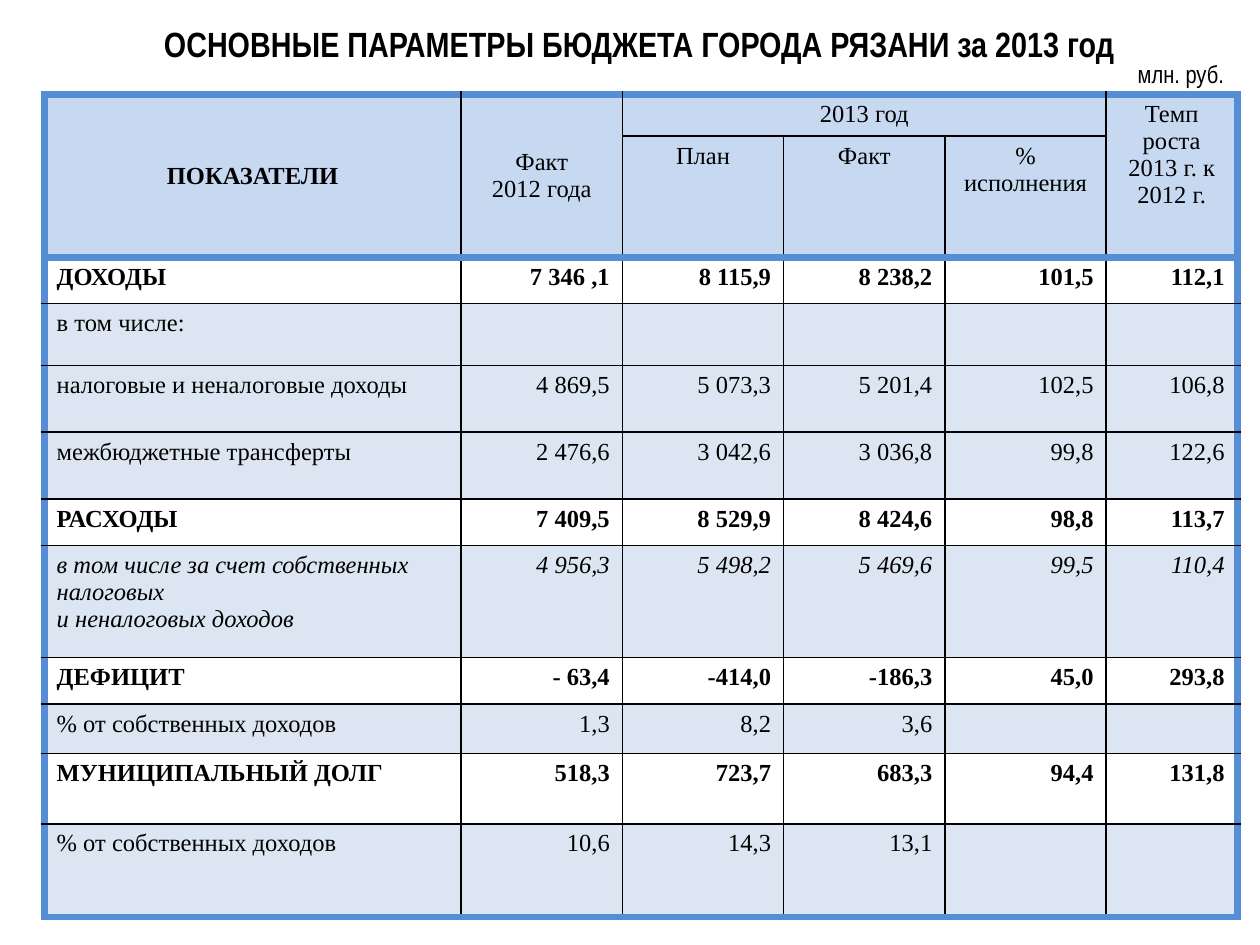
from dataclasses import dataclass

from lxml.etree import SubElement
from pptx import Presentation
from pptx.dml.color import RGBColor
from pptx.enum.text import MSO_ANCHOR, MSO_AUTO_SIZE, PP_ALIGN
from pptx.oxml.ns import qn
from pptx.util import Inches, Pt


@dataclass(frozen=True)
class Theme:
    ink: str = "000000"
    frame: str = "558ED5"
    head: str = "C6D9F1"
    tint: str = "DCE6F2"
    plain: str = "FFFFFF"
    sans: str = "Arial Narrow"
    serif: str = "Times New Roman"
    title: int = 20
    body: int = 14
    thin: float = 1
    thick: float = 4.5


LOOK = Theme()
CELL = Inches(0.1)
COLS = [33.1] + [12.8] * 4 + [10.4]
ROWS = [3.3, 7.6, 3.7, 4.9, 5.3, 5.3, 3.7, 8.9, 3.7, 3.9, 5.6, 7.4]
SPANS = [(0, 0, 1, 0), (0, 1, 1, 1), (0, 2, 0, 4), (0, 5, 1, 5)]
HEAD = [
    (0, 0, ["ПОКАЗАТЕЛИ"]),
    (0, 1, ["Факт", "2012 года"]),
    (0, 2, ["2013 год"]),
    (0, 5, ["Темп роста 2013 г. к 2012 г."]),
    (1, 2, ["План"]),
    (1, 3, ["Факт"]),
    (1, 4, ["% исполнения"]),
]
DATA = [
    ("bold", ["ДОХОДЫ"], "7 346 ,1", "8 115,9", "8 238,2", "101,5", "112,1"),
    ("", ["в том числе:"], "", "", "", "", ""),
    ("", ["налоговые и неналоговые доходы"],
     "4 869,5", "5 073,3", "5 201,4", "102,5", "106,8"),
    ("", ["межбюджетные трансферты"],
     "2 476,6", "3 042,6", "3 036,8", "99,8", "122,6"),
    ("bold", ["РАСХОДЫ"], "7 409,5", "8 529,9", "8 424,6", "98,8", "113,7"),
    ("italic", ["в том числе за счет собственных налоговых", "и неналоговых доходов"],
     "4 956,3", "5 498,2", "5 469,6", "99,5", "110,4"),
    ("bold", ["ДЕФИЦИТ"], "- 63,4", "-414,0", "-186,3", "45,0", "293,8"),
    ("", ["% от собственных доходов"], "1,3", "8,2", "3,6", "", ""),
    ("bold", ["МУНИЦИПАЛЬНЫЙ ДОЛГ"], "518,3", "723,7", "683,3", "94,4", "131,8"),
    ("", ["% от собственных доходов"], "10,6", "14,3", "13,1", "", ""),
]


def grid(*box):
    return [round(n * CELL) for n in box]


def write(frame, lines, align, face, size, style=""):
    for n, line in enumerate(lines):
        para = frame.paragraphs[0] if n == 0 else frame.add_paragraph()
        para.alignment = align
        run = para.add_run()
        run.text = line
        font = run.font
        font.name, font.size = face, Pt(size)
        font.bold, font.italic = style == "bold", style == "italic"
        font.color.rgb = RGBColor.from_string(LOOK.ink)


def title(slide, box):
    shape = slide.shapes.title
    shape.left, shape.top, shape.width, shape.height = grid(*box)
    frame = shape.text_frame
    frame.word_wrap = True
    frame.auto_size = MSO_AUTO_SIZE.NONE
    frame.vertical_anchor = MSO_ANCHOR.MIDDLE
    write(frame, ["ОСНОВНЫЕ ПАРАМЕТРЫ БЮДЖЕТА ГОРОДА РЯЗАНИ за 2013 год"],
          PP_ALIGN.CENTER, LOOK.sans, LOOK.title, "bold")


def unit(slide, box):
    frame = slide.shapes.add_textbox(*grid(*box)).text_frame
    frame.word_wrap = True
    frame.margin_left = Inches(0.25)
    write(frame, ["млн. руб."], PP_ALIGN.LEFT, LOOK.sans, LOOK.body)


def home(row, col):
    for top, left, low, right in SPANS:
        if top <= row <= low and left <= col <= right:
            return top, left
    return row, col


def stroke(row, col, down, over):
    near, side = row + down, col + over
    if not (0 <= near < len(ROWS) and 0 <= side < len(COLS)):
        return LOOK.thick, LOOK.frame
    if home(row, col) == home(near, side):
        return 0, None
    if {row, near} == {1, 2}:
        return LOOK.thick, LOOK.frame
    return LOOK.thin, LOOK.ink


def border(cell, row, col):
    props = cell._tc.get_or_add_tcPr()
    sides = {"lnL": (0, -1), "lnR": (0, 1), "lnT": (-1, 0), "lnB": (1, 0)}
    for tag, step in sides.items():
        width, color = stroke(row, col, *step)
        line = SubElement(props, qn("a:" + tag), w=str(Pt(width)))
        if color:
            fill = SubElement(line, qn("a:solidFill"))
            SubElement(fill, qn("a:srgbClr"), val=color)
        else:
            SubElement(line, qn("a:noFill"))


def paint(cell, row):
    if row < 2:
        color = LOOK.head
    else:
        color = LOOK.plain if DATA[row - 2][0] == "bold" else LOOK.tint
    cell.fill.solid()
    cell.fill.fore_color.rgb = RGBColor.from_string(color)


def budget(slide, box):
    table = slide.shapes.add_table(len(ROWS), len(COLS), *grid(*box)).table
    table.first_row = table.horz_banding = False
    for col, size in zip(table.columns, grid(*COLS)):
        col.width = size
    for row, size in zip(table.rows, grid(*ROWS)):
        row.height = size
    for top, left, low, right in SPANS:
        table.cell(top, left).merge(table.cell(low, right))
    for row in range(len(ROWS)):
        for col in range(len(COLS)):
            cell = table.cell(row, col)
            border(cell, row, col)
            paint(cell, row)
    for row, col, lines in HEAD:
        cell = table.cell(row, col)
        if col < 2:
            cell.vertical_anchor = MSO_ANCHOR.MIDDLE
        write(cell.text_frame, lines, PP_ALIGN.CENTER, LOOK.serif, LOOK.body,
              "" if col else "bold")
    for row, (style, label, *values) in enumerate(DATA, 2):
        write(table.cell(row, 0).text_frame, label, PP_ALIGN.LEFT,
              LOOK.serif, LOOK.body, style)
        for col, value in enumerate(values, 1):
            if value:
                write(table.cell(row, col).text_frame, [value], PP_ALIGN.RIGHT,
                      LOOK.serif, LOOK.body, style)
    for cell in table.iter_cells():
        if not cell.text:
            para = cell.text_frame.paragraphs[0]._p
            SubElement(para, qn("a:endParaRPr"), sz=str(LOOK.body * 100))


def main():
    deck = Presentation()
    deck.slide_width, deck.slide_height = grid(100, 75)
    slide = deck.slides.add_slide(deck.slide_layouts[5])
    title(slide, (5.1, 1.1, 91.3, 4.7))
    budget(slide, (3.5, 7.5, sum(COLS), sum(ROWS)))
    unit(slide, (87.8, 4.2, 11, 3.4))
    deck.save("out.pptx")


if __name__ == "__main__":
    main()
